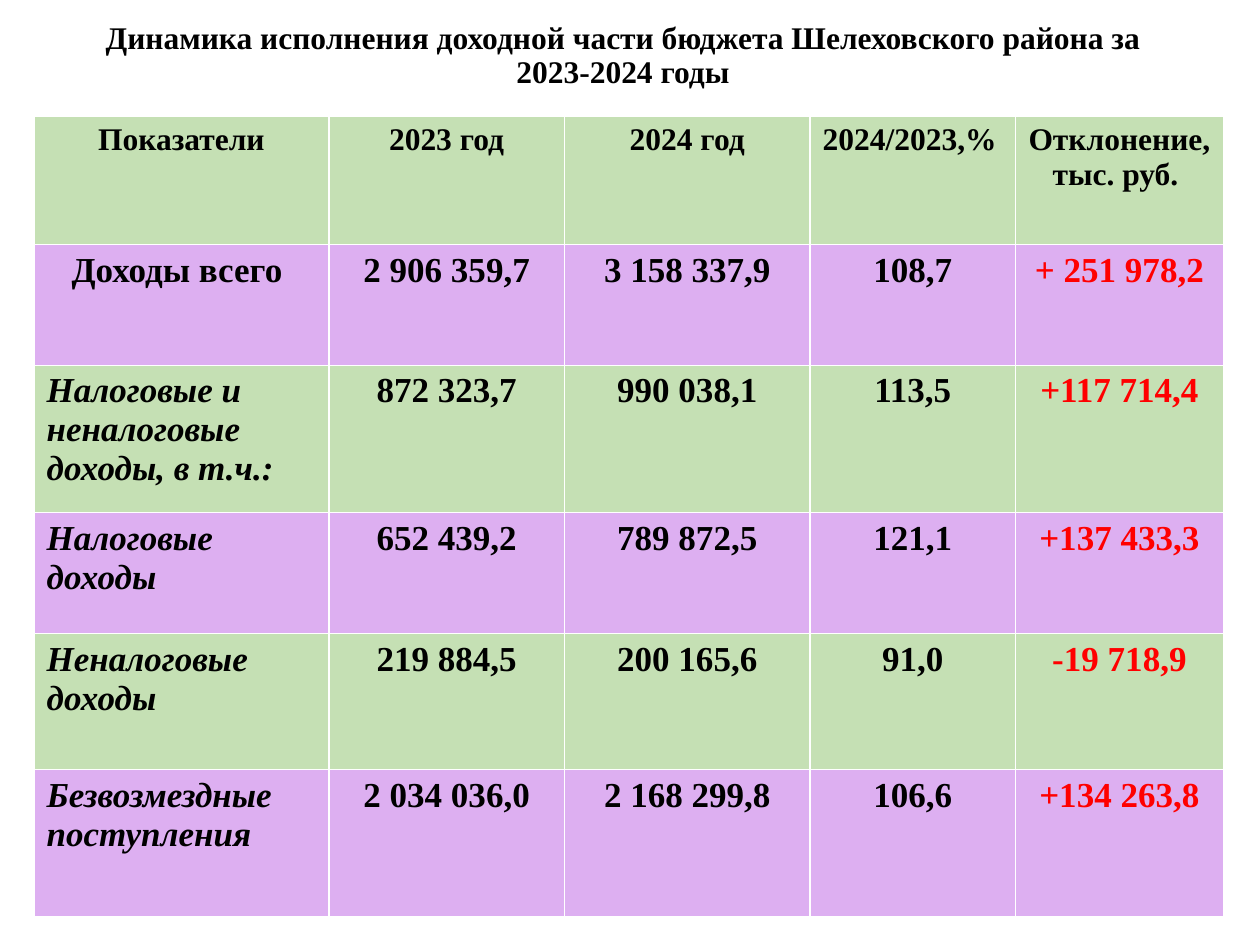
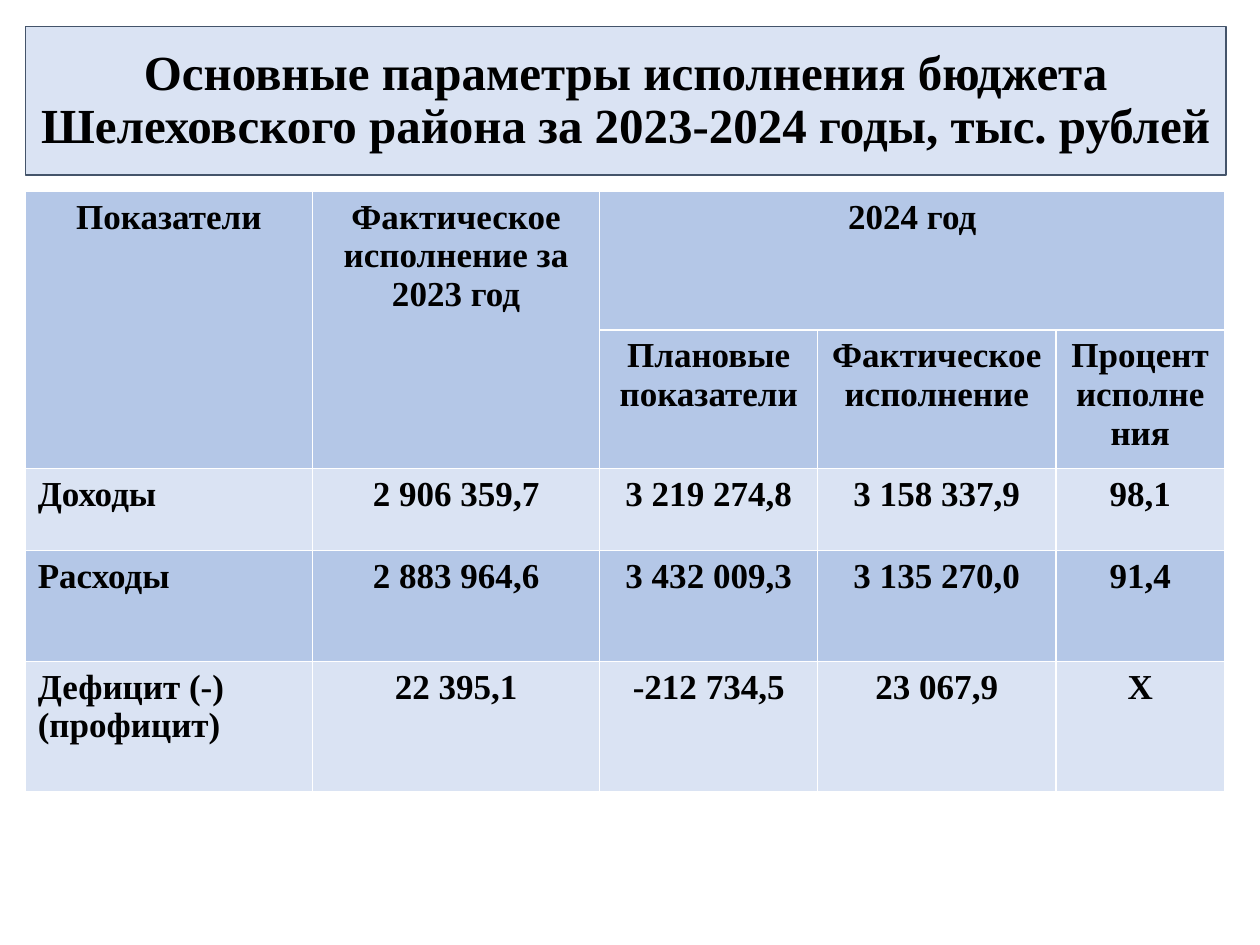
from pptx import Presentation
from pptx.dml.color import RGBColor
from pptx.enum.text import MSO_ANCHOR, MSO_AUTO_SIZE, PP_ALIGN
from pptx.util import Inches, Pt

FONT = "Times New Roman"
BLACK, WHITE, RED, SLATE = "000000", "FFFFFF", "FF0000", "44546A"
GREEN, LILAC = "C5E0B4", "DDAFF1"
BLUE, PALE_BLUE = "B4C7E7", "DAE3F3"
LEFT, CENTER = PP_ALIGN.LEFT, PP_ALIGN.CENTER


def rgb(value):
    return RGBColor.from_string(value)


def paint(target, color):
    target.fill.solid()
    target.fill.fore_color.rgb = rgb(color)


class Deck:
    def __init__(self):
        self.prs = Presentation()
        self.prs.slide_width, self.prs.slide_height = Inches(10), Inches(7.5)
        self.slide = None

    def new_slide(self):
        self.slide = self.prs.slides.add_slide(self.prs.slide_layouts[5])

    def style(self, paragraph, size, align=CENTER, color=BLACK, italic=False):
        paragraph.alignment = align
        font = paragraph.font
        font.name, font.size, font.bold, font.italic = FONT, Pt(size), True, italic
        font.color.rgb = rgb(color)

    def title(self, text, box, size, fill, line=None, insets=(0.05, 0.05)):
        heading = self.slide.shapes.title
        heading.left, heading.top, heading.width, heading.height = map(Inches, box)
        paint(heading, fill)
        if line:
            heading.line.color.rgb = rgb(line)
            heading.line.width = Pt(0.75)
        frame = heading.text_frame
        frame.word_wrap, frame.auto_size = True, MSO_AUTO_SIZE.NONE
        frame.vertical_anchor = MSO_ANCHOR.MIDDLE
        frame.margin_top, frame.margin_bottom = map(Inches, insets)
        frame.text = text
        frame.paragraphs[0].line_spacing = 0.9
        self.style(frame.paragraphs[0], size)

    def table(self, left, top, widths, heights, rows, fills):
        """Place the rows; the default table style draws the white rules."""
        table = self.slide.shapes.add_table(
            len(heights), len(widths), Inches(left), Inches(top),
            Inches(sum(widths)), Inches(sum(heights))).table
        for column, width in zip(table.columns, widths):
            column.width = Inches(width)
        for row, height in zip(table.rows, heights):
            row.height = Inches(height)
        for r, (texts, fill) in enumerate(zip(rows, fills)):
            for c, text in enumerate(texts):
                cell = table.cell(r, c)
                paint(cell, fill)
                if text:
                    cell.text = text
        return table

    def style_cells(self, cells, size, **look):
        for cell in cells:
            for paragraph in cell.text_frame.paragraphs:
                self.style(paragraph, size, **look)


def income_slide(deck):
    deck.new_slide()
    deck.title("Динамика исполнения доходной части бюджета Шелеховского района "
               "за 2023-2024 годы", (0.43, 0.13, 9.03, 0.55), 18, WHITE,
               insets=(0.08, 0))
    rows = [
        ("Показатели", "2023 год", "2024 год", "2024/2023,%",
         "Отклонение,\nтыс. руб. "),
        ("Доходы всего ", "2 906 359,7", "3 158 337,9", "108,7", "+ 251 978,2"),
        ("Налоговые и неналоговые доходы, в т.ч.:", "872 323,7", "990 038,1",
         "113,5", "+117 714,4"),
        ("Налоговые\nдоходы", "652 439,2", "789 872,5", "121,1", "+137 433,3"),
        ("Неналоговые\nдоходы", "219 884,5", "200 165,6", "91,0", "-19 718,9"),
        ("Безвозмездные\nпоступления", "2 034 036,0", "2 168 299,8", "106,6",
         "+134 263,8"),
    ]
    table = deck.table(0.27, 0.92, [2.34, 1.87, 1.95, 1.63, 1.65],
                       [1.02, 0.96, 1.17, 0.96, 1.08, 1.17],
                       rows, [GREEN, LILAC] * 3)
    header, total, *details = [list(row.cells) for row in table.rows]

    # Header, with the growth column set to the left
    deck.style_cells(header, 18)
    header[3].text_frame.paragraphs[0].alignment = LEFT

    # Figures, income names and red deviations
    for cells in [total] + details:
        deck.style_cells(cells[:-1], 20)
        deck.style_cells(cells[-1:], 20, color=RED)
    deck.style_cells([cells[0] for cells in details], 20, align=LEFT, italic=True)


def budget_slide(deck):
    deck.new_slide()
    deck.title("Основные параметры исполнения бюджета Шелеховского района "
               "за 2023-2024 годы, тыс. рублей", (0.2, 0.21, 9.53, 1.18), 28,
               PALE_BLUE, line=SLATE)
    rows = [
        ("Показатели", "Фактическое исполнение за 2023 год", "2024 год", "", ""),
        ("", "", "Плановые показатели", "Фактическое\nисполнение",
         "Процент \nисполнения"),
        ("Доходы", "2 906 359,7", "3 219 274,8", "3 158 337,9", "98,1"),
        ("Расходы", "2 883 964,6", "3 432 009,3", "3 135 270,0", "91,4"),
        ("Дефицит (-)\n(профицит)", "22 395,1", "-212 734,5", "23 067,9", "Х"),
    ]
    table = deck.table(0.2, 1.52, [2.28, 2.28, 1.73, 1.89, 1.34],
                       [1.1, 1.1, 0.65, 0.88, 1.03], rows,
                       [BLUE, BLUE, PALE_BLUE, BLUE, PALE_BLUE])
    deck.style_cells(table.iter_cells(), 20)
    deck.style_cells([table.cell(r, 0) for r in range(2, len(rows))], 20, align=LEFT)

    # Two-level header
    for first, last in [((0, 0), (1, 0)), ((0, 1), (1, 1)), ((0, 2), (0, 4))]:
        table.cell(*first).merge(table.cell(*last))


def main():
    deck = Deck()
    income_slide(deck)
    budget_slide(deck)
    deck.prs.save("out.pptx")


if __name__ == "__main__":
    main()
